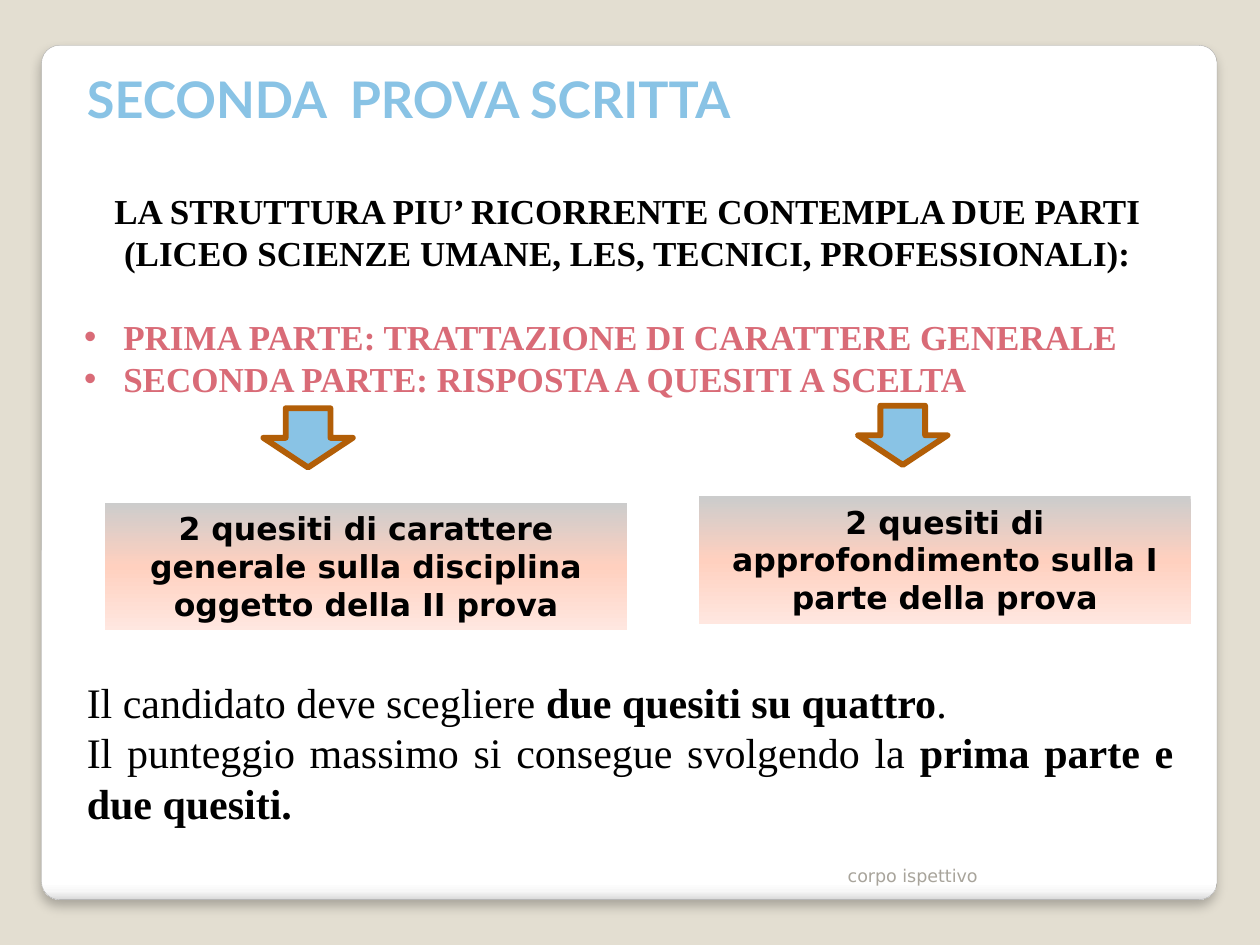
from lxml.etree import SubElement
from pptx import Presentation
from pptx.dml.color import RGBColor
from pptx.enum.shapes import MSO_SHAPE as SHAPE
from pptx.enum.text import MSO_ANCHOR as ANCHOR, PP_ALIGN as ALIGN
from pptx.oxml.ns import qn
from pptx.util import Inches, Pt

SERIF = "Times New Roman"
SANS = "DejaVu Sans"
BLACK = "000000"
BLUE = "89C3E5"
ROSE = "D96B77"
PANEL_STOPS = [(0, "FFFFFF"), (98, "FFFFFF"), (99, "F7F7F7"), (100, "DADADA")]
BOX_STOPS = [(0, "CCCCCC"), (50, "FFD0BF"), (100, "FFE7E0")]


def color(value):
    return RGBColor.from_string(value)


def add_run(p, text, size, font, fill=BLACK, bold=False):
    r = p.add_run()
    r.text = text
    r.font.size = Pt(size)
    r.font.name = font
    r.font.bold = bold
    r.font.color.rgb = color(fill)


def next_paragraph(tf, align=ALIGN.LEFT):
    p = tf.paragraphs[0]
    if p.runs:
        p = tf.add_paragraph()
    p.alignment = align
    return p


def add_bullet(p):
    pPr = p._p.get_or_add_pPr()
    pPr.set("marL", str(Inches(0.31)))
    pPr.set("indent", str(-Inches(0.31)))
    SubElement(pPr, qn("a:buFont"), typeface="Arial")
    SubElement(pPr, qn("a:buChar"), char="•")


def add_text_box(s, left, top, width, height):
    tf = s.shapes.add_textbox(Inches(left), Inches(top), Inches(width), Inches(height)).text_frame
    tf.word_wrap = True
    return tf


def add_shape(s, kind, left, top, width, height):
    sp = s.shapes.add_shape(kind, Inches(left), Inches(top), Inches(width), Inches(height))
    sp.shadow.inherit = False
    return sp


def set_gradient(sp, stops):
    geom = sp.element.spPr.find(qn("a:prstGeom"))
    grad = SubElement(sp.element.spPr, qn("a:gradFill"), rotWithShape="1")
    geom.addnext(grad)
    gs_list = SubElement(grad, qn("a:gsLst"))
    for position, value in stops:
        gs = SubElement(gs_list, qn("a:gs"), pos=str(position * 1000))
        SubElement(gs, qn("a:srgbClr"), val=value)
    SubElement(grad, qn("a:lin"), ang="5400000", scaled="0")


def add_panel(s):
    sp = add_shape(s, SHAPE.ROUNDED_RECTANGLE, 0.33, 0.36, 9.33, 6.78)
    sp.adjustments[0] = 0.021
    sp.line.color.rgb = color("A4A4A4")
    sp.line.width = Pt(0.16)
    set_gradient(sp, PANEL_STOPS)
    effects = sp.element.spPr.find(qn("a:effectLst"))
    shadow = SubElement(effects, qn("a:outerShdw"), blurRad=str(Pt(6)), dist=str(Pt(4)),
                        dir="5400000", algn="t", rotWithShape="0")
    clr = SubElement(shadow, qn("a:srgbClr"), val=BLACK)
    SubElement(clr, qn("a:alpha"), val="25000")
    s.shapes.title.element.addprevious(sp.element)


def add_title(s, text):
    title = s.shapes.title
    title.left, title.top = Inches(0.59), Inches(0.6)
    title.width, title.height = Inches(9), Inches(0.47)
    tf = title.text_frame
    tf.vertical_anchor = ANCHOR.BOTTOM
    add_run(next_paragraph(tf), text, 28.8, "Lato", BLUE, True)


def add_structure(s):
    tf = add_text_box(s, 0.57, 1.15, 8.82, 2.09)
    tf.margin_top = Inches(0.35)
    for text in ("LA STRUTTURA PIU’ RICORRENTE CONTEMPLA DUE PARTI",
                 "(LICEO SCIENZE UMANE, LES, TECNICI, PROFESSIONALI):"):
        add_run(next_paragraph(tf, ALIGN.CENTER), text, 20, SERIF, bold=True)
    for text, gap in (("PRIMA PARTE: TRATTAZIONE DI CARATTERE GENERALE", 24),
                      ("SECONDA PARTE: RISPOSTA A QUESITI A SCELTA", 0)):
        p = next_paragraph(tf)
        p.space_before = Pt(gap)
        add_bullet(p)
        add_run(p, text, 20, SERIF, ROSE, True)


def add_question_box(s, left, top, width, text):
    sp = add_shape(s, SHAPE.RECTANGLE, left, top, width, 1.01)
    sp.line.fill.background()
    set_gradient(sp, BOX_STOPS)
    tf = sp.text_frame
    tf.word_wrap = True
    tf.vertical_anchor = ANCHOR.TOP
    add_run(next_paragraph(tf, ALIGN.CENTER), text, 18, SANS, bold=True)


def add_arrow(s, left, top):
    sp = add_shape(s, SHAPE.DOWN_ARROW, left, top, 0.71, 0.47)
    sp.fill.solid()
    sp.fill.fore_color.rgb = color(BLUE)
    sp.line.color.rgb = color("B25E07")
    sp.line.width = Pt(3.35)


def add_rules(s):
    tf = add_text_box(s, 0.59, 5.32, 8.82, 1.62)
    for runs in ([("Il candidato deve scegliere ", False), ("due quesiti su quattro", True), (".", False)],
                 [("Il punteggio massimo si consegue svolgendo la ", False),
                  ("prima parte e due quesiti.", True)]):
        p = next_paragraph(tf, ALIGN.JUSTIFY)
        for text, bold in runs:
            add_run(p, text, 24, SERIF, bold=bold)


def add_footer(s, text):
    tf = add_text_box(s, 6.63, 6.68, 2.5, 0.4)
    tf.vertical_anchor = ANCHOR.BOTTOM
    add_run(next_paragraph(tf), text, 10, SANS, "A8A49B")


def main():
    prs = Presentation()
    prs.slide_width, prs.slide_height = Inches(10), Inches(7.5)
    s = prs.slides.add_slide(prs.slide_layouts[5])
    s.background.fill.solid()
    s.background.fill.fore_color.rgb = color("E3DED1")
    add_panel(s)
    add_title(s, "SECONDA  PROVA SCRITTA")
    add_structure(s)
    add_question_box(s, 0.83, 3.99, 4.15, "2 quesiti di carattere generale sulla disciplina oggetto della II prova")
    add_question_box(s, 5.55, 3.94, 3.9, "2 quesiti di approfondimento sulla I parte della prova")
    add_arrow(s, 2.09, 3.24)
    add_arrow(s, 6.81, 3.22)
    add_rules(s)
    add_footer(s, "corpo ispettivo")
    prs.save("out.pptx")


if __name__ == "__main__":
    main()
